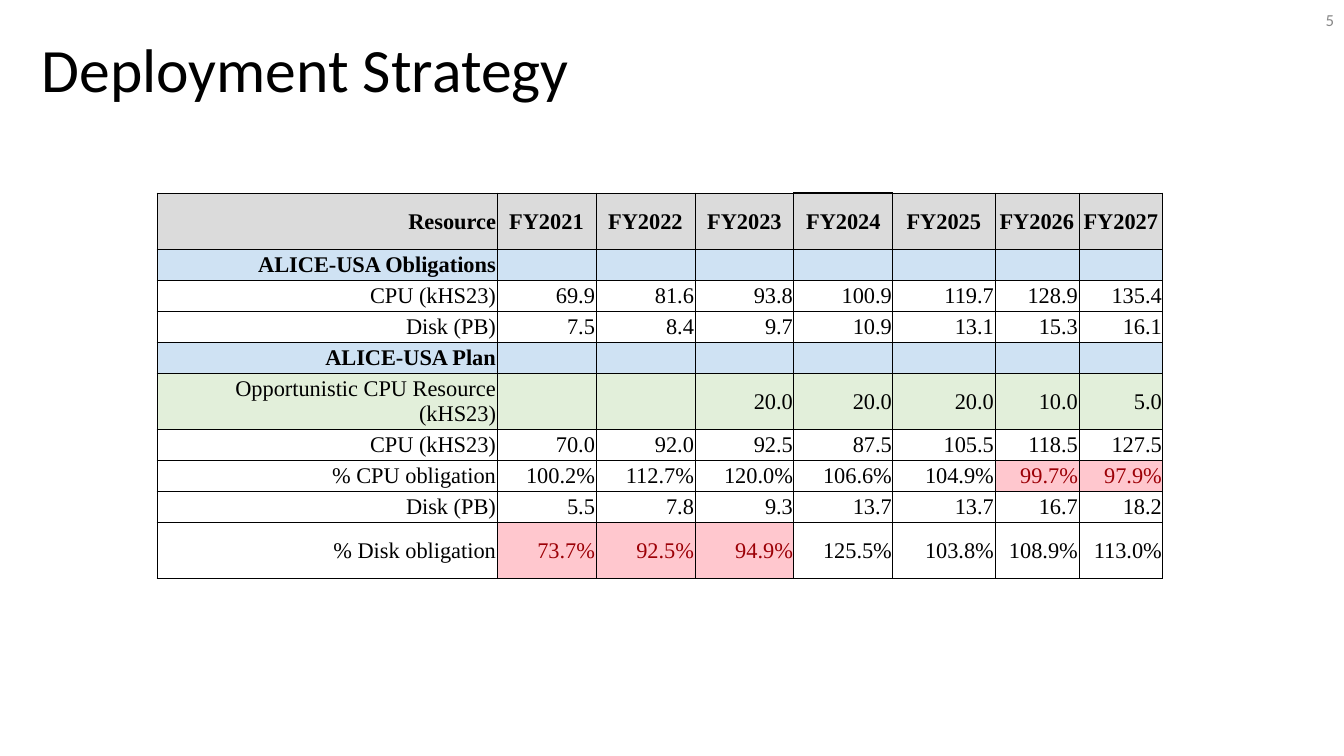
"""Build the Deployment Strategy slide with its yearly resource table."""
from dataclasses import dataclass

from lxml.etree import SubElement
from pptx import Presentation
from pptx.dml.color import RGBColor as Rgb
from pptx.enum.text import MSO_ANCHOR as Anchor, PP_ALIGN as Align
from pptx.oxml.ns import qn
from pptx.util import Emu, Pt

EMU_PER_PX = 914400 / 100.8


@dataclass(frozen=True)
class Theme:
    heading_font: str = "Calibri"
    table_font: str = "Times New Roman"
    title_size: int = 44
    table_size: int = 16
    number_size: int = 12
    text: str = "000000"
    number: str = "888888"
    header_fill: str = "DBDBDB"
    section_fill: str = "CFE2F3"
    opportunistic_fill: str = "E2EFDA"
    shortfall_fill: str = "FFC7CE"
    shortfall_text: str = "9C0006"
    thin: float = 0.5
    thick: float = 1


THEME = Theme()
COLUMN_WIDTHS = [340, 99, 99, 99, 99, 102, 84, 84]
TALL_ROW, SHORT_ROW = 56, 31
TALL_ROWS = (0, 5, 9)
FOCUS_COLUMN = 4
ROW_FILLS = {
    0: THEME.header_fill,
    1: THEME.section_fill,
    4: THEME.section_fill,
    5: THEME.opportunistic_fill,
}
BOLD_ROWS = (0, 1, 4)
RESOURCES = [
    ["Resource"] + [f"FY{year}" for year in range(2021, 2028)],
    ["ALICE-USA Obligations"] + [""] * 7,
    ["CPU (kHS23)", "69.9", "81.6", "93.8", "100.9", "119.7", "128.9", "135.4"],
    ["Disk (PB)", "7.5", "8.4", "9.7", "10.9", "13.1", "15.3", "16.1"],
    ["ALICE-USA Plan"] + [""] * 7,
    ["Opportunistic CPU Resource (kHS23)", "", "", "20.0", "20.0", "20.0", "10.0", "5.0"],
    ["CPU (kHS23)", "70.0", "92.0", "92.5", "87.5", "105.5", "118.5", "127.5"],
    ["% CPU obligation", "100.2%", "112.7%", "120.0%", "106.6%", "104.9%", "99.7%", "97.9%"],
    ["Disk (PB)", "5.5", "7.8", "9.3", "13.7", "13.7", "16.7", "18.2"],
    ["% Disk obligation", "73.7%", "92.5%", "94.9%", "125.5%", "103.8%", "108.9%", "113.0%"],
]


def px(length):
    return Emu(round(length * EMU_PER_PX))


def add_run(paragraph, text, font_name, size, color, bold=False):
    run = paragraph.add_run()
    run.text = text
    run.font.name = font_name
    run.font.size = Pt(size)
    run.font.bold = bold
    run.font.color.rgb = Rgb.from_string(color)


def add_label(slide, box, text, size, color, align=Align.LEFT, spacing=1.0):
    frame = slide.shapes.add_textbox(*map(px, box)).text_frame
    frame.word_wrap = True
    frame.vertical_anchor = Anchor.MIDDLE
    paragraph = frame.paragraphs[0]
    paragraph.alignment = align
    paragraph.line_spacing = spacing
    add_run(paragraph, text, THEME.heading_font, size, color)


def set_borders(cell, row, column):
    widths = {
        "L": THEME.thick if column in (FOCUS_COLUMN, FOCUS_COLUMN + 1) else THEME.thin,
        "R": THEME.thick if column in (FOCUS_COLUMN - 1, FOCUS_COLUMN) else THEME.thin,
        "T": THEME.thick if (row, column) == (0, FOCUS_COLUMN) else THEME.thin,
        "B": THEME.thin,
    }
    properties = cell._tc.get_or_add_tcPr()
    for side, width in widths.items():
        line = SubElement(properties, qn(f"a:ln{side}"), w=str(Pt(width)))
        fill = SubElement(line, qn("a:solidFill"))
        SubElement(fill, qn("a:srgbClr"), val=THEME.text)


def fill_cell(cell, row, column, text):
    shortfall = text.endswith("%") and float(text.rstrip("%")) < 100
    cell.margin_left = cell.margin_right = cell.margin_top = px(1)
    cell.margin_bottom = 0
    cell.vertical_anchor = Anchor.MIDDLE
    set_borders(cell, row, column)
    color = THEME.shortfall_fill if shortfall else ROW_FILLS.get(row)
    if color:
        cell.fill.solid()
        cell.fill.fore_color.rgb = Rgb.from_string(color)
    else:
        cell.fill.background()
    paragraph = cell.text_frame.paragraphs[0]
    paragraph.alignment = Align.CENTER if row == 0 and column else Align.RIGHT
    if text:
        ink = THEME.shortfall_text if shortfall else THEME.text
        add_run(paragraph, text, THEME.table_font, THEME.table_size, ink, row in BOLD_ROWS)
    else:
        SubElement(paragraph._p, qn("a:endParaRPr"), sz=str(THEME.table_size * 100))


def add_resource_table(slide, left, top):
    heights = [TALL_ROW if row in TALL_ROWS else SHORT_ROW for row in range(len(RESOURCES))]
    box = map(px, (left, top, sum(COLUMN_WIDTHS), sum(heights)))
    table = slide.shapes.add_table(len(heights), len(COLUMN_WIDTHS), *box).table
    table.first_row = table.horz_banding = False
    for column, width in zip(table.columns, COLUMN_WIDTHS):
        column.width = px(width)
    for row, (values, height) in enumerate(zip(RESOURCES, heights)):
        table.rows[row].height = px(height)
        for column, text in enumerate(values):
            fill_cell(table.cell(row, column), row, column, text)


def main():
    presentation = Presentation()
    presentation.slide_width, presentation.slide_height = px(1344), px(756)
    slide = presentation.slides.add_slide(presentation.slide_layouts[6])
    add_label(slide, (32, 0, 1221, 146), "Deployment Strategy",
              THEME.title_size, THEME.text, spacing=0.9)
    add_label(slide, (1302, 0, 42, 40), "5",
              THEME.number_size, THEME.number, Align.RIGHT)
    add_resource_table(slide, 157, 193)
    presentation.save("out.pptx")


if __name__ == "__main__":
    main()
